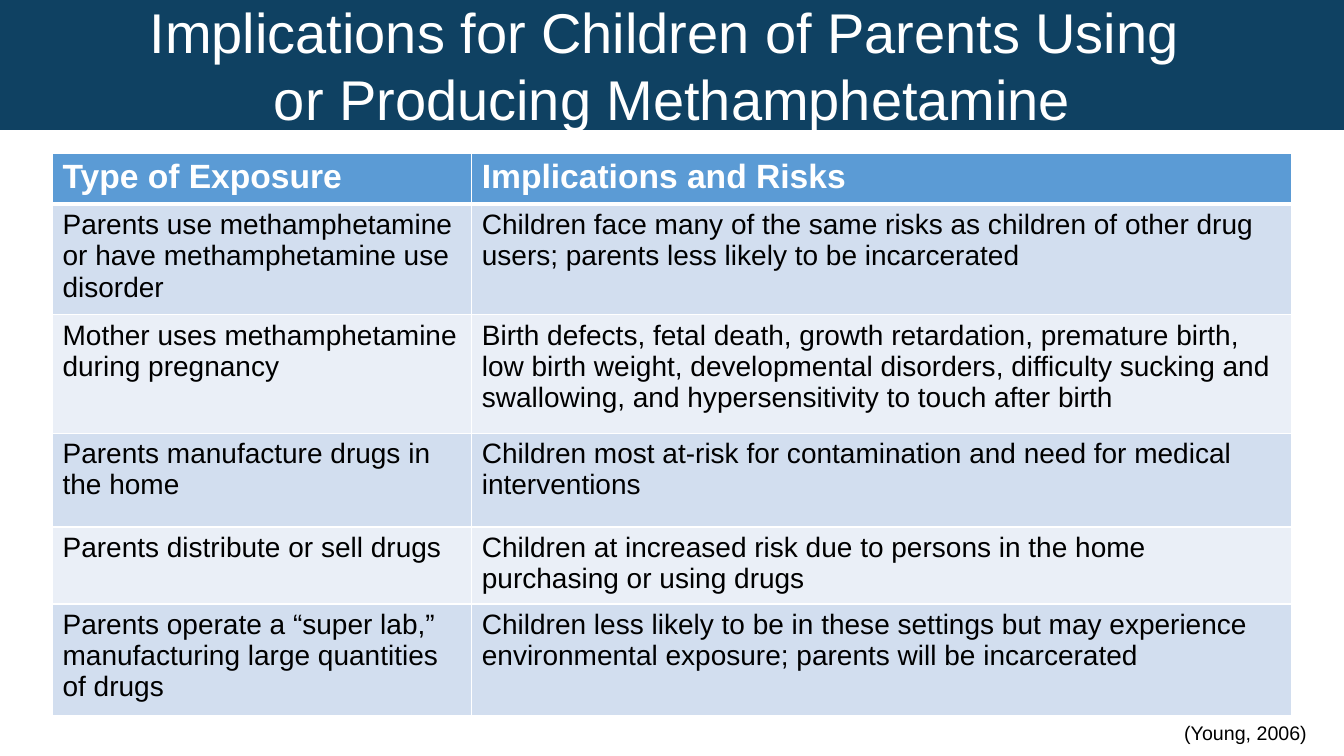
from pptx import Presentation
from pptx.dml.color import RGBColor
from pptx.enum.text import MSO_ANCHOR, PP_ALIGN
from pptx.oxml import parse_xml
from pptx.oxml.ns import nsdecls
from pptx.util import Pt

CENTER = PP_ALIGN.CENTER
MIDDLE = MSO_ANCHOR.MIDDLE
TITLE_ONLY = 5
COLORS = {"navy": "0F4162", "blue": "5B9BD5", "band": "D2DEEF",
          "pale": "EAEFF7", "white": "FFFFFF", "black": "000000"}
TITLE = ["Implications for Children of Parents Using ",
         "or Producing Methamphetamine"]
ROWS = [
    ("Type of Exposure", "Implications and Risks"),
    ("Parents use methamphetamine or have methamphetamine use disorder",
     "Children face many of the same risks as children of other drug users; "
     "parents less likely to be incarcerated"),
    ("Mother uses methamphetamine during pregnancy",
     "Birth defects, fetal death, growth retardation, premature birth, "
     "low birth weight, developmental disorders, difficulty sucking and "
     "swallowing, and hypersensitivity to touch after birth"),
    ("Parents manufacture drugs in the home",
     "Children most at-risk for contamination and need for medical "
     "interventions"),
    ("Parents distribute or sell drugs",
     "Children at increased risk due to persons in the home purchasing or "
     "using drugs"),
    ("Parents operate a “super lab,” manufacturing large quantities of drugs",
     "Children less likely to be in these settings but may experience "
     "environmental exposure; parents will be incarcerated"),
]
COLUMN_WIDTHS = [299.5, 585.4]
ROW_HEIGHTS = [36.4, 79, 84.6, 67, 55, 79.4]


class SlideBuilder:
    """Adds styled elements to one slide."""

    def __init__(self, slide, font="Arial"):
        self.slide = slide
        self.font = font

    def color(self, name):
        return RGBColor.from_string(COLORS[name])

    def add_span(self, para, text, size, color, bold=False):
        span = para.add_run()
        span.text = text
        span.font.name = self.font
        span.font.size = Pt(size)
        span.font.bold = bold
        span.font.color.rgb = self.color(color)

    def title(self, lines, width, height):
        box = self.slide.shapes.title
        box.left, box.top, box.width, box.height = 0, 0, Pt(width), Pt(height)
        box.fill.solid()
        box.fill.fore_color.rgb = self.color("navy")
        box.line.color.rgb = self.color("navy")
        box.line.width = Pt(2)
        frame = box.text_frame
        frame.word_wrap = True
        frame.vertical_anchor = MIDDLE
        frame.margin_left = frame.margin_right = Pt(4.5)
        frame.margin_top = frame.margin_bottom = Pt(4.5)
        for index, line in enumerate(lines):
            para = frame.add_paragraph() if index else frame.paragraphs[0]
            para.alignment = CENTER
            para.line_spacing = 1.0
            para.space_before = Pt(0)
            self.add_span(para, line, 40, "white")

    def borders(self, cell, row):
        properties = cell._tc.get_or_add_tcPr()
        widths = {"lnL": 1, "lnR": 1, "lnT": 3 if row == 1 else 1,
                  "lnB": 3 if row == 0 else 1}
        for position, (side, width) in enumerate(widths.items()):
            properties.insert(position, parse_xml(
                f'<a:{side} {nsdecls("a")} w="{Pt(width)}"><a:solidFill>'
                f'<a:srgbClr val="{COLORS["white"]}"/></a:solidFill></a:{side}>'))

    def table(self, rows, left, top):
        table = self.slide.shapes.add_table(
            len(rows), len(COLUMN_WIDTHS), Pt(left), Pt(top),
            Pt(sum(COLUMN_WIDTHS)), Pt(sum(ROW_HEIGHTS))).table
        for column, width in zip(table.columns, COLUMN_WIDTHS):
            column.width = Pt(width)
        for index, (texts, height) in enumerate(zip(rows, ROW_HEIGHTS)):
            table.rows[index].height = Pt(height)
            header = index == 0
            fill = "blue" if header else "band" if index % 2 else "pale"
            for column, text in enumerate(texts):
                cell = table.cell(index, column)
                cell.fill.solid()
                cell.fill.fore_color.rgb = self.color(fill)
                self.borders(cell, index)
                self.add_span(cell.text_frame.paragraphs[0], text,
                              24 if header else 20,
                              "white" if header else "black", header)

    def citation(self, text, left, top, width, height):
        box = self.slide.shapes.add_textbox(
            Pt(left), Pt(top), Pt(width), Pt(height))
        box.text_frame.word_wrap = True
        self.add_span(box.text_frame.paragraphs[0], text, 14, "black")


def main():
    deck = Presentation()
    deck.slide_width, deck.slide_height = Pt(960), Pt(540)
    page = deck.slides.add_slide(deck.slide_layouts[TITLE_ONLY])
    builder = SlideBuilder(page)
    builder.title(TITLE, 960, 92)
    builder.table(ROWS, 37.5, 109.5)
    builder.citation("(Young, 2006)", 838.8, 511.2, 113, 24.5)
    deck.save("out.pptx")


if __name__ == "__main__":
    main()
